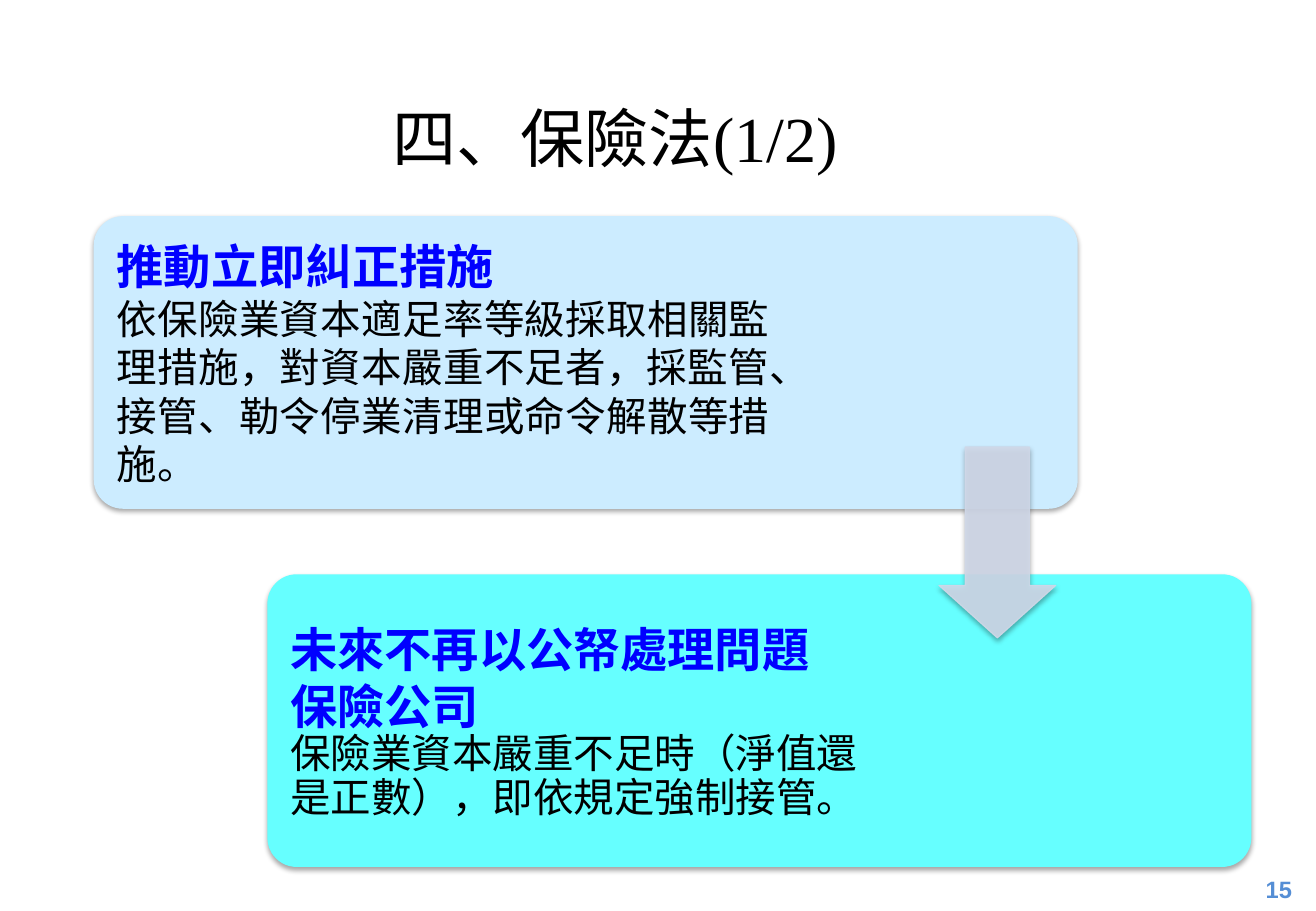
from dataclasses import dataclass

import pptx
import pptx.dml.color
import pptx.enum.shapes
import pptx.enum.text
import pptx.oxml
import pptx.oxml.ns
import pptx.util
from pptx.util import Cm

SHAPES = pptx.enum.shapes.MSO_SHAPE
ALIGN = pptx.enum.text.PP_ALIGN
ANCHOR = pptx.enum.text.MSO_ANCHOR


@dataclass(frozen=True)
class Theme:
    serif: str = "Times New Roman"
    sans: str = "Arial"
    ink: str = "000000"
    heading: str = "0000FF"
    page_number: str = "558ED5"
    first_card: str = "CCECFF"
    second_card: str = "66FFFF"
    arrow: str = "D0D8E8"
    title_size: int = 38
    heading_size: int = 28
    body_size: int = 24
    page_size: int = 14


THEME = Theme()
CARD_WIDTH, CARD_HEIGHT = Cm(20.57), Cm(6.12)
CARD_MARGIN = Cm(0.18)
CARD_INSET = Cm(0.3)


def rgb(color):
    return pptx.dml.color.RGBColor.from_string(color)


def add_soft_shadow(shape):
    """Give the shape a faint shadow that falls straight down."""
    shape.shadow.inherit = False
    effects = shape.element.spPr.find(pptx.oxml.ns.qn("a:effectLst"))
    effects.append(pptx.oxml.parse_xml(
        f'<a:outerShdw {pptx.oxml.ns.nsdecls("a")} blurRad="39370" dist="22860" '
        'dir="5400000" rotWithShape="0"><a:srgbClr val="000000">'
        '<a:alpha val="35000"/></a:srgbClr></a:outerShdw>'))


def make_translucent(fill, percent):
    color = fill._xPr.find(f'.//{pptx.oxml.ns.qn("a:srgbClr")}')
    color.append(pptx.oxml.parse_xml(
        f'<a:alpha {pptx.oxml.ns.nsdecls("a")} val="{percent * 1000}"/>'))


def add_panel(slide, kind, box, color, adjustments):
    panel = slide.shapes.add_shape(kind, *box)
    for index, value in enumerate(adjustments):
        panel.adjustments[index] = value
    panel.fill.solid()
    panel.fill.fore_color.rgb = rgb(color)
    panel.line.fill.background()
    add_soft_shadow(panel)
    return panel


def add_frame(slide, box, anchor=ANCHOR.TOP, inset=None):
    frame = slide.shapes.add_textbox(*box).text_frame
    frame.word_wrap = True
    frame.vertical_anchor = anchor
    if inset is not None:
        frame.margin_left = frame.margin_right = inset
        frame.margin_top = frame.margin_bottom = inset
    return frame


def add_run(paragraph, text, size, color, font=THEME.serif, bold=False):
    run = paragraph.add_run()
    run.text = text
    run.font.name = font
    run.font.size = pptx.util.Pt(size)
    run.font.bold = bold
    run.font.color.rgb = rgb(color)


def add_card(slide, left, top, color, text_width, heading_lines, body,
             body_align=ALIGN.LEFT, body_spacing=1.0):
    add_panel(slide, SHAPES.ROUNDED_RECTANGLE,
              (left, top, CARD_WIDTH, CARD_HEIGHT), color, [0.1])
    text_box = (left + CARD_MARGIN, top + CARD_MARGIN,
                text_width, CARD_HEIGHT - 2 * CARD_MARGIN)
    frame = add_frame(slide, text_box, ANCHOR.MIDDLE, CARD_INSET)
    heading = frame.paragraphs[0]
    for index, line in enumerate(heading_lines):
        if index:
            heading.add_line_break()
        add_run(heading, line, THEME.heading_size, THEME.heading, bold=True)
    measure = frame.add_paragraph()
    measure.alignment = body_align
    measure.line_spacing = body_spacing
    add_run(measure, body, THEME.body_size, THEME.ink)


def add_arrow(slide, box):
    arrow = add_panel(slide, SHAPES.DOWN_ARROW, box, THEME.arrow, [0.55, 0.45])
    make_translucent(arrow.fill, 90)
    arrow.line.width = pptx.util.Pt(0.75)
    arrow.line.fill.solid()
    arrow.line.fill.fore_color.rgb = rgb(THEME.arrow)
    make_translucent(arrow.line.fill, 90)


def add_title(slide, text):
    frame = add_frame(slide, (Cm(7.95), Cm(1.93), Cm(11.81), Cm(1.88)))
    frame.auto_size = pptx.enum.text.MSO_AUTO_SIZE.SHAPE_TO_FIT_TEXT
    frame.paragraphs[0].alignment = ALIGN.JUSTIFY
    add_run(frame.paragraphs[0], text, THEME.title_size, THEME.ink)


def add_page_number(slide, number):
    frame = add_frame(slide, (Cm(25.96), Cm(18.14), Cm(1.55), Cm(0.91)),
                      ANCHOR.MIDDLE)
    frame.paragraphs[0].alignment = ALIGN.CENTER
    add_run(frame.paragraphs[0], number, THEME.page_size, THEME.page_number,
            THEME.sans, bold=True)


def main():
    deck = pptx.Presentation()
    deck.slide_width, deck.slide_height = Cm(27.51), Cm(19.05)
    slide = deck.slides.add_slide(deck.slide_layouts[6])

    add_page_number(slide, "15")
    add_title(slide, "四、保險法(1/2)")
    add_card(slide, Cm(1.96), Cm(4.52), THEME.first_card, Cm(14.25),
             ["推動立即糾正措施"],
             "依保險業資本適足率等級採取相關監理措施，對資本嚴重不足者，"
             "採監管、接管、勒令停業清理或命令解散等措施。",
             body_align=ALIGN.JUSTIFY)
    add_card(slide, Cm(5.59), Cm(12.01), THEME.second_card, Cm(12.6),
             ["未來不再以公帑處理問題", "保險公司"],
             "保險業資本嚴重不足時（淨值還是正數），即依規定強制接管。",
             body_spacing=0.9)
    add_arrow(slide, (Cm(19.63), Cm(9.35), Cm(2.44), Cm(3.99)))

    deck.save("out.pptx")


if __name__ == "__main__":
    main()
